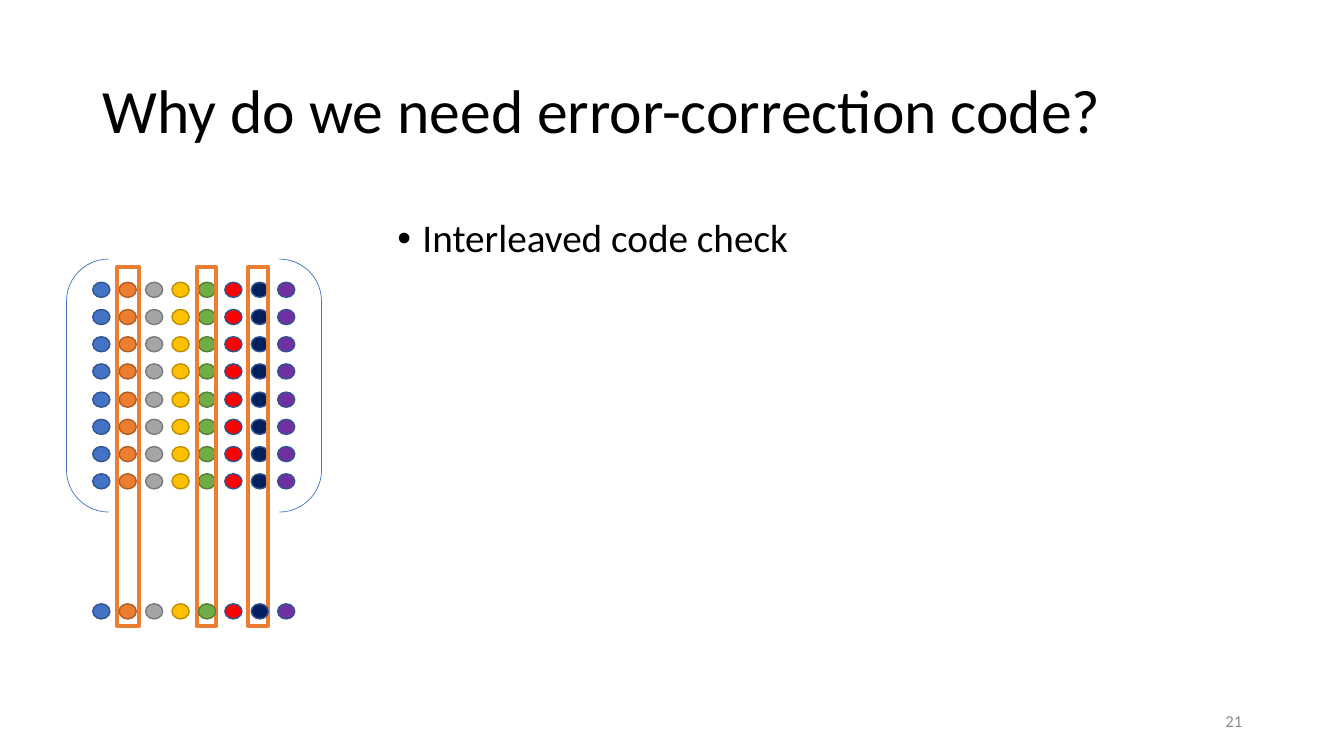
from dataclasses import dataclass

from pptx import Presentation
from pptx.dml.color import RGBColor
from pptx.enum import shapes, text
from pptx.util import Inches, Pt


@dataclass(frozen=True)
class Theme:
    font: str = "Calibri"
    black: str = "000000"
    gray: str = "8C8C8C"
    blue: str = "4472C4"
    orange: str = "ED7D31"
    dots: tuple = (
        ("4472C4", "325491"),
        ("ED7D31", "AF5C24"),
        ("A5A5A5", "7A7A7A"),
        ("FFC000", "BD8E00"),
        ("70AD47", "538035"),
        ("FF0000", "325491"),
        ("002060", "325491"),
        ("7030A0", "325491"),
    )
    title: int = 44
    body: int = 28
    number: int = 12


THEME = Theme()
KIND = shapes.MSO_SHAPE
LEFT, STEP = 0.92, 0.262
ROWS = [top + 0.27 * i for top in (2.8, 3.89) for i in range(4)]
CHECK = 5.99
FRAMES = ((1.16, 0.22), (1.95, 0.19), (2.46, 0.2))


def color(code):
    return RGBColor.from_string(code)


def place(shape, box):
    shape.left, shape.top, shape.width, shape.height = map(Inches, box)


def write(shape, words, size, code, align, anchor):
    frame = shape.text_frame
    frame.text = words
    frame.word_wrap = True
    frame.auto_size = text.MSO_AUTO_SIZE.NONE
    frame.vertical_anchor = anchor
    line = frame.paragraphs[0]
    line.alignment = align
    font = line.runs[0].font
    font.name, font.size = THEME.font, Pt(size)
    font.color.rgb = color(code)
    return line


def draw(slide, kind, box, edge, weight, fill=None):
    shape = slide.shapes.add_shape(kind, *map(Inches, box))
    shape.shadow.inherit = False
    if fill:
        shape.fill.solid()
        shape.fill.fore_color.rgb = color(fill)
    else:
        shape.fill.background()
    shape.line.color.rgb = color(edge)
    shape.line.width = Pt(weight)


def add_row(slide, top):
    for i, (fill, edge) in enumerate(THEME.dots):
        box = (LEFT + i * STEP, top, 0.17, 0.15)
        draw(slide, KIND.FLOWCHART_CONNECTOR, box, edge, 1, fill)


def add_title(slide):
    title = slide.shapes.title
    place(title, (0.92, 0.4, 11.5, 1.45))
    line = write(title, "Why do we need error-correction code?", THEME.title,
                 THEME.black, text.PP_ALIGN.LEFT, text.MSO_ANCHOR.MIDDLE)
    line.line_spacing = 0.9


def add_body(slide):
    body = slide.placeholders[1]
    place(body, (3.84, 2.12, 8.16, 4.76))
    line = write(body, "Interleaved code check", THEME.body,
                 THEME.black, text.PP_ALIGN.LEFT, text.MSO_ANCHOR.TOP)
    line.line_spacing = 0.9
    line.space_before = Pt(10)
    props = line._p.get_or_add_pPr()
    props.set("marL", str(Inches(0.25)))
    props.set("indent", str(Inches(-0.25)))


def add_number(slide):
    box = slide.shapes.add_textbox(*map(Inches, (9.42, 6.95, 3, 0.4)))
    write(box, "21", THEME.number, THEME.gray,
          text.PP_ALIGN.RIGHT, text.MSO_ANCHOR.MIDDLE)


def main():
    deck = Presentation()
    deck.slide_width, deck.slide_height = Inches(13.33), Inches(7.5)
    slide = deck.slides.add_slide(deck.slide_layouts[1])
    add_title(slide)
    add_body(slide)
    add_number(slide)
    for top in ROWS:
        add_row(slide, top)
    draw(slide, KIND.DOUBLE_BRACKET, (0.66, 2.57, 2.53, 2.51), THEME.blue, 0.5)
    for left, width in FRAMES:
        draw(slide, KIND.RECTANGLE, (left, 2.65, width, 3.56), THEME.orange, 3)
    add_row(slide, CHECK)
    deck.save("out.pptx")


if __name__ == "__main__":
    main()
